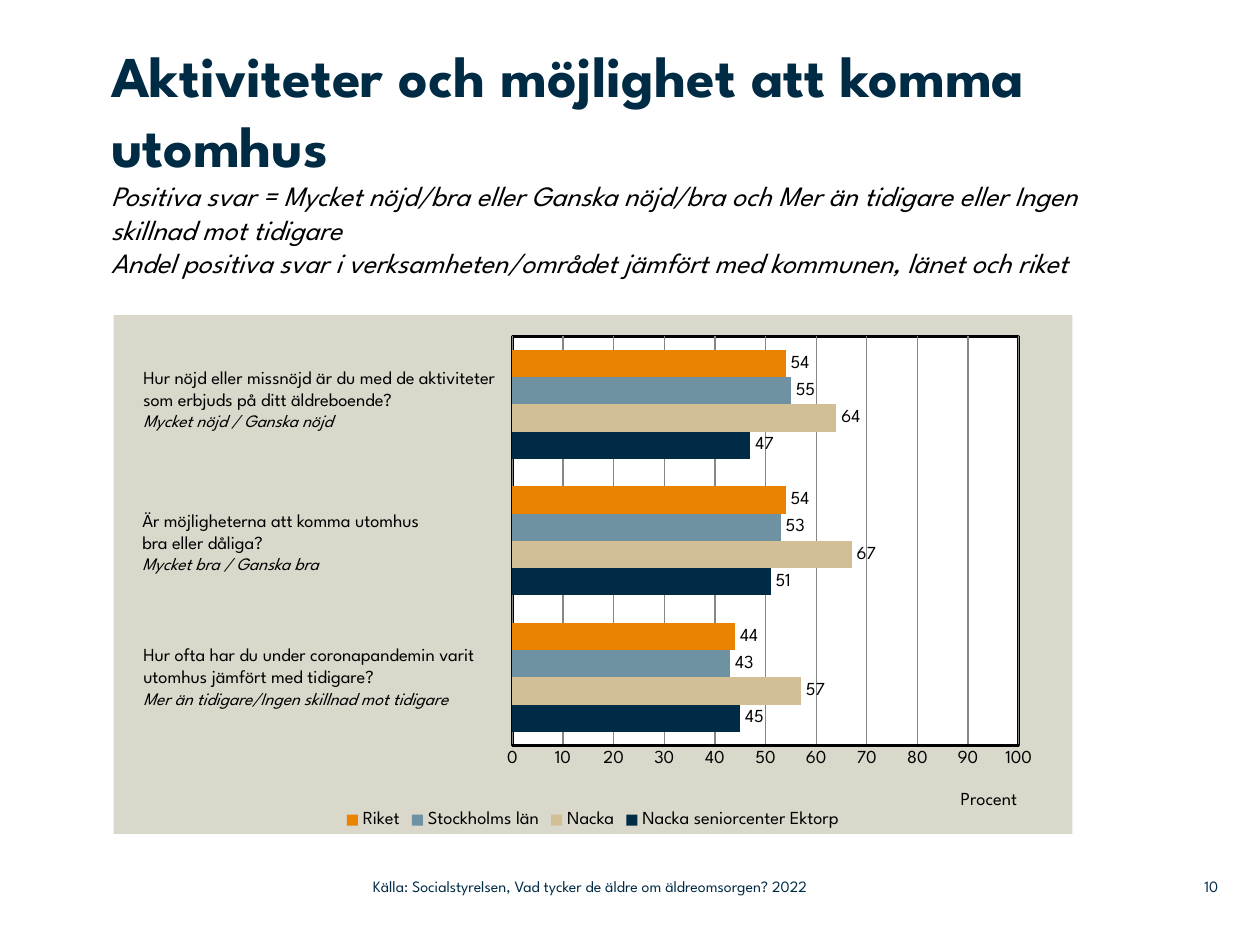
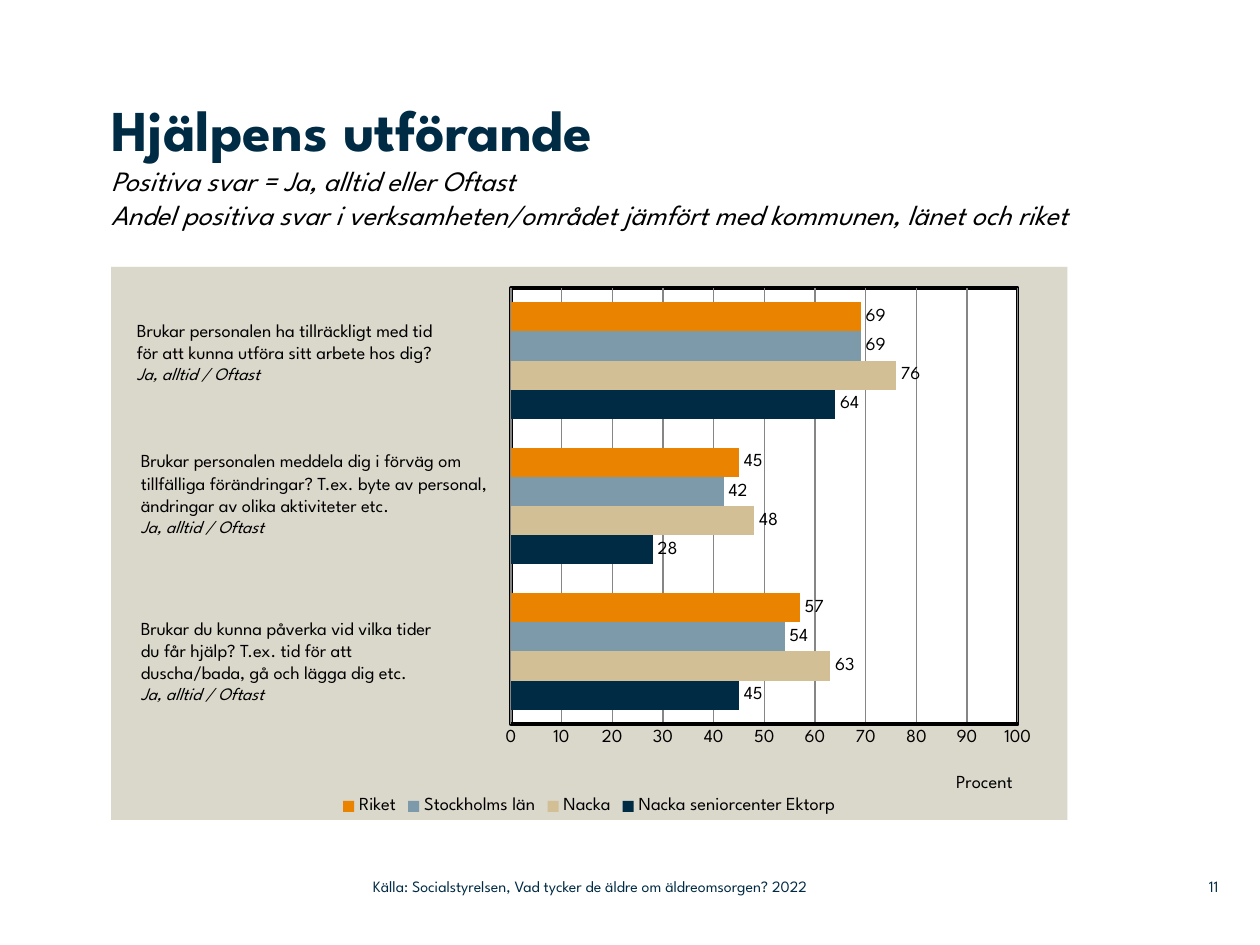
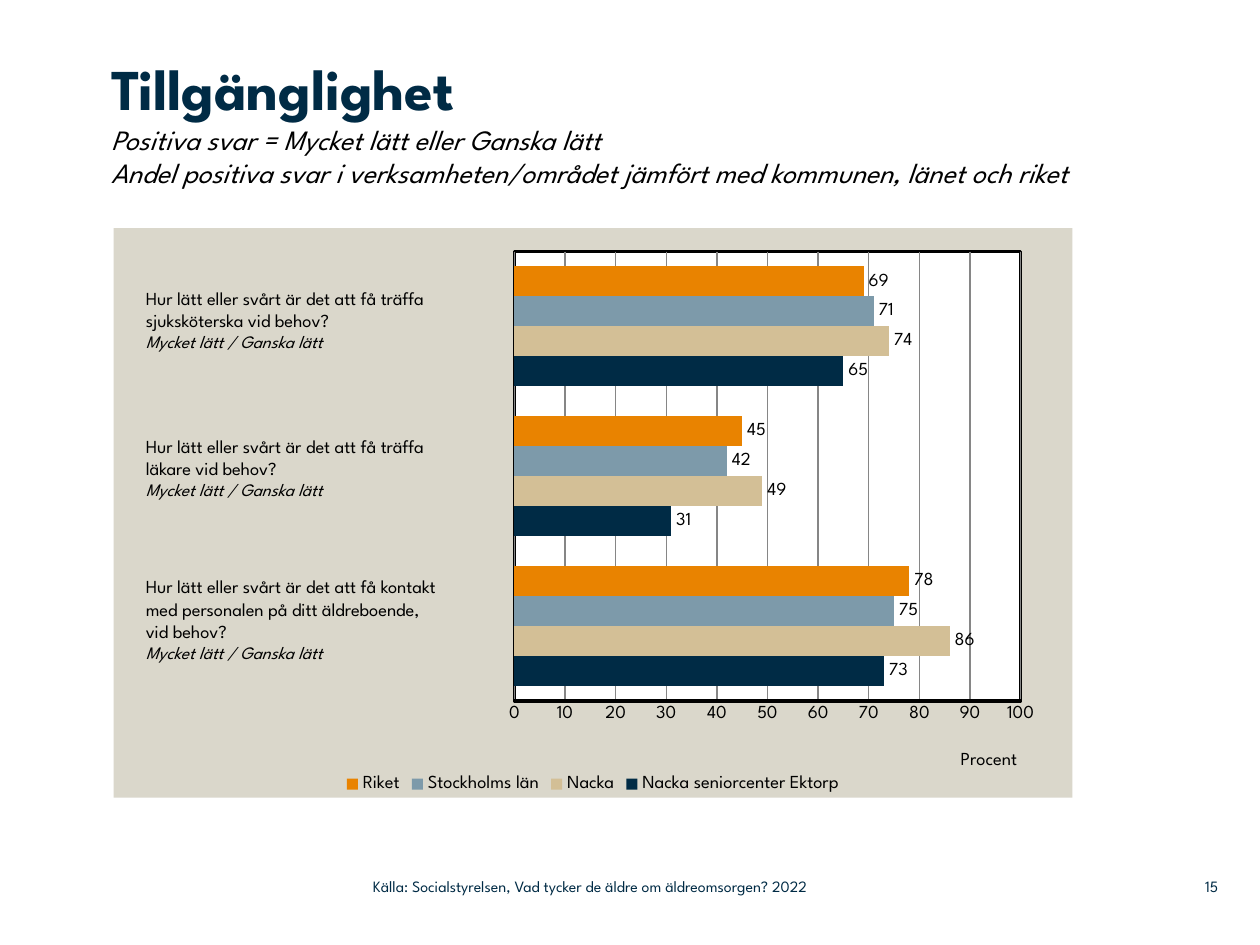
from pptx import Presentation
from pptx import util as u
from pptx.chart import data as chart_data
from pptx.dml.color import RGBColor
from pptx.enum import chart as chart_enum, text
from pptx.oxml import parse_xml
from pptx.oxml.ns import nsdecls, qn

Cm, Pt = u.Cm, u.Pt

FONT = "League Spartan"
NAVY = RGBColor(0x00, 0x2B, 0x45)
SAND = RGBColor(0xD3, 0xBF, 0x96)
TEAL = RGBColor(0x6F, 0x92, 0xA2)
BLUE_GREY = RGBColor(0x7D, 0x9A, 0xAA)
ORANGE = RGBColor(0xE9, 0x83, 0x00)
BLACK = RGBColor(0x00, 0x00, 0x00)
GRID_GREY = RGBColor(0x86, 0x86, 0x86)

COMPARISON = "Andel positiva svar i verksamheten/området jämfört med kommunen, länet och riket"
SOURCE = "Källa: Socialstyrelsen, Vad tycker de äldre om äldreomsorgen? 2022"
CHART_FILL = (
    f'<c:spPr {nsdecls("c", "a")}><a:solidFill><a:srgbClr val="DAD7CB"/></a:solidFill>'
    "<a:ln><a:noFill/></a:ln></c:spPr>"
)
PLOT_FRAME = (
    f'<c:spPr {nsdecls("c", "a")}><a:solidFill><a:srgbClr val="FFFFFF"/></a:solidFill>'
    '<a:ln w="25400"><a:solidFill><a:srgbClr val="000000"/></a:solidFill></a:ln></c:spPr>'
)

SLIDES = [
    {
        "number": "10",
        "title": "Aktiviteter och möjlighet att komma utomhus",
        "positive": "Positiva svar = Mycket nöjd/bra eller Ganska nöjd/bra och Mer än tidigare eller Ingen skillnad mot tidigare",
        "title_box": (0.81, 4.8),
        "chart_box": (2.29, 6.35, 19.33, 10.46),
        "plot": (0.416, 0.041, 0.528, 0.789),
        "county_color": TEAL,
        "values": [(45, 51, 47), (57, 67, 64), (43, 53, 55), (44, 54, 54)],
        "questions": [
            (2.64, 7.26, ["Hur nöjd eller missnöjd är du med de aktiviteter som erbjuds på ditt äldreboende?",
                          "Mycket nöjd / Ganska nöjd"]),
            (2.62, 10.13, ["Är möjligheterna att komma utomhus", "bra eller dåliga?",
                           "Mycket bra / Ganska bra"]),
            (2.64, 12.85, ["Hur ofta har du under coronapandemin varit utomhus jämfört med tidigare?",
                           "Mer än tidigare/Ingen skillnad mot tidigare"]),
        ],
    },
    {
        "number": "11",
        "title": "Hjälpens utförande",
        "positive": "Positiva svar = Ja, alltid eller Oftast",
        "title_box": (1.9, 3.07),
        "chart_box": (2.24, 5.38, 19.28, 11.15),
        "plot": (0.418, 0.038, 0.53, 0.789),
        "county_color": BLUE_GREY,
        "values": [(45, 28, 64), (63, 48, 76), (54, 42, 69), (57, 45, 69)],
        "questions": [
            (2.51, 6.3, ["Brukar personalen ha tillräckligt med tid",
                         "för att kunna utföra sitt arbete hos dig?", "Ja, alltid / Oftast"]),
            (2.59, 8.94, ["Brukar personalen meddela dig i förväg om tillfälliga förändringar? "
                          "T.ex. byte av personal, ändringar av olika aktiviteter etc.",
                          "Ja, alltid / Oftast"]),
            (2.59, 12.32, ["Brukar du kunna påverka vid vilka tider", "du får hjälp? T.ex. tid för att",
                           "duscha/bada, gå och lägga dig etc.", "Ja, alltid / Oftast"]),
        ],
    },
    {
        "number": "15",
        "title": "Tillgänglighet",
        "positive": "Positiva svar = Mycket lätt eller Ganska lätt",
        "title_box": (1.07, 3.53),
        "chart_box": (2.29, 4.6, 19.33, 11.48),
        "plot": (0.418, 0.041, 0.528, 0.789),
        "county_color": BLUE_GREY,
        "values": [(73, 31, 65), (86, 49, 74), (75, 42, 71), (78, 45, 69)],
        "questions": [
            (2.69, 5.66, ["Hur lätt eller svårt är det att få träffa sjuksköterska vid behov?",
                          "Mycket lätt / Ganska lätt"]),
            (2.69, 8.64, ["Hur lätt eller svårt är det att få träffa", "läkare vid behov?",
                          "Mycket lätt / Ganska lätt"]),
            (2.69, 11.48, ["Hur lätt eller svårt är det att få kontakt",
                           "med personalen på ditt äldreboende,", "vid behov?",
                           "Mycket lätt / Ganska lätt"]),
        ],
    },
]


def add_text(slide, box, lines, inset=True, anchor=text.MSO_ANCHOR.TOP, align=text.PP_ALIGN.LEFT):
    frame = slide.shapes.add_textbox(*map(Cm, box)).text_frame
    frame.word_wrap = True
    frame.vertical_anchor = anchor
    if not inset:
        frame.margin_left = frame.margin_top = frame.margin_right = frame.margin_bottom = 0
    for index, (line, size, color, bold, italic) in enumerate(lines):
        paragraph = frame.add_paragraph() if index else frame.paragraphs[0]
        paragraph.text = line
        paragraph.alignment = align
        font = paragraph.font
        font.name, font.size, font.bold, font.italic = FONT, Pt(size), bold, italic
        font.color.rgb = color


def set_layout(element, index, values):
    for layout in element.findall(qn("c:layout")):
        element.remove(layout)
    tags = ["xMode", "yMode", *"xywh"[:len(values)]]
    settings = "".join(f'<c:{tag} val="{value}"/>' for tag, value in zip(tags, ["edge", "edge", *values]))
    target = '<c:layoutTarget val="inner"/>' if len(values) == 4 else ""
    element.insert(index, parse_xml(
        f'<c:layout {nsdecls("c")}><c:manualLayout>{target}{settings}</c:manualLayout></c:layout>'))


presentation = Presentation()
presentation.slide_width, presentation.slide_height = Cm(25.4), Cm(19.05)

for content in SLIDES:
    slide = presentation.slides.add_slide(presentation.slide_layouts[6])
    title_top, title_height = content["title_box"]
    add_text(slide, (2.24, title_top, 19.8, title_height), [
        (content["title"], 33, NAVY, True, False),
        (content["positive"], 16, BLACK, False, True),
        (COMPARISON, 16, BLACK, False, True),
    ], inset=False)

    answers = chart_data.CategoryChartData()
    answers.categories = ["1", "2", "3"]
    for name, values in zip(["Nacka seniorcenter Ektorp", "Nacka", "Stockholms län", "Riket"], content["values"]):
        answers.add_series(name, values)
    chart = slide.shapes.add_chart(
        chart_enum.XL_CHART_TYPE.BAR_CLUSTERED, *map(Cm, content["chart_box"]), answers).chart
    chart.has_title = False
    chart.font.name, chart.font.size = FONT, Pt(10.5)
    chart.font.color.rgb = BLACK
    chart.has_legend = True
    chart.legend.position = chart_enum.XL_LEGEND_POSITION.BOTTOM
    chart.legend.include_in_layout = False
    chart.legend.font.name, chart.legend.font.size = FONT, Pt(10.5)

    plot = chart.plots[0]
    plot.gap_width = 100
    plot.vary_by_categories = False
    plot.has_data_labels = True
    plot.data_labels.show_value = True
    plot.data_labels.position = chart_enum.XL_LABEL_POSITION.OUTSIDE_END
    plot.data_labels.font.name, plot.data_labels.font.size = FONT, Pt(10.5)
    for series, color in zip(plot.series, [NAVY, SAND, content["county_color"], ORANGE]):
        series.format.fill.solid()
        series.format.fill.fore_color.rgb = color

    chart.category_axis.visible = False
    axis = chart.value_axis
    axis.minimum_scale, axis.maximum_scale, axis.major_unit = 0, 100, 10
    axis.major_tick_mark = axis.minor_tick_mark = chart_enum.XL_TICK_MARK.NONE
    axis.format.line.color.rgb = BLACK
    axis.format.line.width = Pt(2)
    axis.major_gridlines.format.line.color.rgb = GRID_GREY
    axis.major_gridlines.format.line.width = Pt(0.75)
    axis.axis_title.text_frame.text = "Procent"
    title_font = axis.axis_title.text_frame.paragraphs[0].font
    title_font.name, title_font.size, title_font.bold = FONT, Pt(10.5), False
    title_font.color.rgb = BLACK
    set_layout(axis.axis_title._element, 1, (0.88, 0.91))

    chart_element = chart.element.find(qn("c:chart"))
    plot_area = chart_element.find(qn("c:plotArea"))
    set_layout(plot_area, 0, content["plot"])
    plot_area.append(parse_xml(PLOT_FRAME))
    chart_element.addnext(parse_xml(CHART_FILL))

    for left, top, (*question, answer) in content["questions"]:
        lines = [(line, 10.5, BLACK, False, False) for line in question]
        add_text(slide, (left, top, 7.64, 2.2), lines + [(answer, 10, BLACK, False, True)])

    for left, width, line, align in [
        (7.52, 11.25, SOURCE, text.PP_ALIGN.LEFT),
        (23.37, 1.19, content["number"], text.PP_ALIGN.RIGHT),
    ]:
        add_text(slide, (left, 17.5, width, 0.74), [(line, 9, NAVY, False, False)],
                 inset=False, anchor=text.MSO_ANCHOR.MIDDLE, align=align)

presentation.save("out.pptx")
